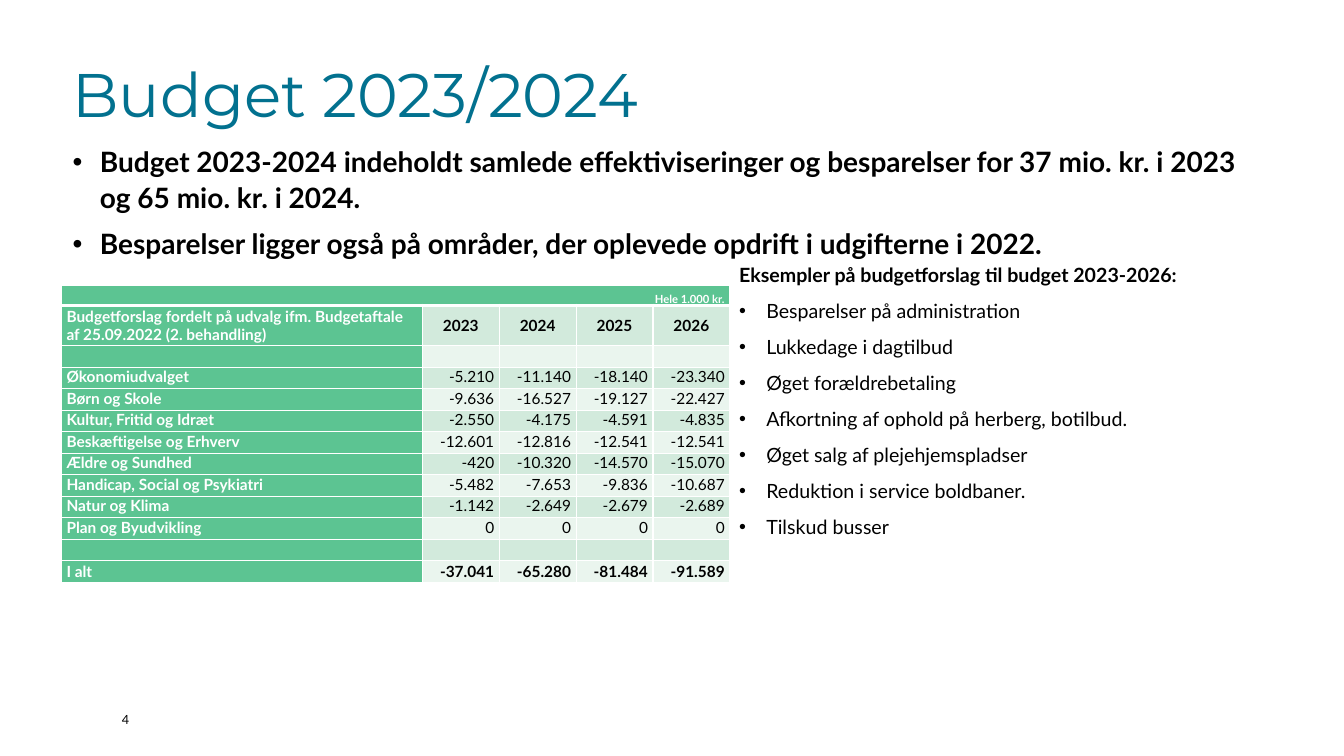
from lxml import etree
from pptx import Presentation
from pptx.dml.color import RGBColor
from pptx.enum.text import MSO_ANCHOR, MSO_AUTO_SIZE, PP_ALIGN
from pptx.oxml.ns import qn
from pptx.util import Inches, Pt

TOP, MIDDLE, BOTTOM = MSO_ANCHOR.TOP, MSO_ANCHOR.MIDDLE, MSO_ANCHOR.BOTTOM
LEFT, CENTER, RIGHT = PP_ALIGN.LEFT, PP_ALIGN.CENTER, PP_ALIGN.RIGHT
NO_AUTOFIT = MSO_AUTO_SIZE.NONE

COLORS = {
    "title": "02718F",
    "text": "000000",
    "white": "FFFFFF",
    "green": "5CC492",
    "band_dark": "D2EADC",
    "band_light": "EAF5EE",
}
HEADING_FONT = "Montserrat"
BODY_FONT = "Lato"

KEY_POINTS = [
    "Budget 2023-2024 indeholdt samlede effektiviseringer og besparelser for 37 mio. kr. i 2023 og 65 mio. kr. i 2024.",
    "Besparelser ligger også på områder, der oplevede opdrift i udgifterne i 2022.",
]
EXAMPLES_HEADING = "Eksempler på budgetforslag til budget 2023-2026:"
EXAMPLES = [
    "Besparelser på administration",
    "Lukkedage i dagtilbud",
    "Øget forældrebetaling",
    "Afkortning af ophold på herberg, botilbud.",
    "Øget salg af plejehjemspladser",
    "Reduktion i service boldbaner.",
    "Tilskud busser",
]
UNIT_NOTE = "Hele 1.000 kr."
EMPTY_ROW = ["", "", "", "", ""]
BUDGET_ROWS = [
    ["Budgetforslag fordelt på udvalg ifm. Budgetaftale af 25.09.2022 (2. behandling)",
     "2023", "2024", "2025", "2026"],
    EMPTY_ROW,
    ["Økonomiudvalget", "-5.210", "-11.140", "-18.140", "-23.340"],
    ["Børn og Skole", "-9.636", "-16.527", "-19.127", "-22.427"],
    ["Kultur, Fritid og Idræt", "-2.550", "-4.175", "-4.591", "-4.835"],
    ["Beskæftigelse og Erhverv", "-12.601", "-12.816", "-12.541", "-12.541"],
    ["Ældre og Sundhed", "-420", "-10.320", "-14.570", "-15.070"],
    ["Handicap, Social og Psykiatri", "-5.482", "-7.653", "-9.836", "-10.687"],
    ["Natur og Klima", "-1.142", "-2.649", "-2.679", "-2.689"],
    ["Plan og Byudvikling", "0", "0", "0", "0"],
    EMPTY_ROW,
    ["I alt", "-37.041", "-65.280", "-81.484", "-91.589"],
]


def rgb(name):
    return RGBColor.from_string(COLORS[name])


def style_runs(paragraph, size, color="text", bold=False, font=BODY_FONT):
    for run in paragraph.runs:
        run.font.size = Pt(size)
        run.font.name = font
        run.font.bold = bold
        run.font.color.rgb = rgb(color)


def place(shape, left, top, width, height, anchor):
    shape.left, shape.top = Inches(left), Inches(top)
    shape.width, shape.height = Inches(width), Inches(height)
    frame = shape.text_frame
    frame.margin_left = frame.margin_right = frame.margin_top = frame.margin_bottom = 0
    frame.word_wrap = True
    frame.auto_size = NO_AUTOFIT
    frame.vertical_anchor = anchor
    return frame


def set_bullet(paragraph, bulleted):
    properties = paragraph._p.get_or_add_pPr()
    indent = Inches(0.27) if bulleted else 0
    properties.set("marL", str(indent))
    properties.set("indent", str(-indent))
    if bulleted:
        etree.SubElement(properties, qn("a:buFont"), typeface="Arial")
        etree.SubElement(properties, qn("a:buChar"), char="•")
    else:
        etree.SubElement(properties, qn("a:buNone"))


def fill_list(frame, items, size, bold=False, heading=None):
    lines = [heading] + items if heading else items
    frame.text = "\n".join(lines)
    for index, paragraph in enumerate(frame.paragraphs):
        is_heading = bool(heading) and index == 0
        set_bullet(paragraph, not is_heading)
        paragraph.alignment = LEFT
        paragraph.line_spacing = 1.05
        paragraph.space_before = Pt(2 if index else 0)
        paragraph.space_after = Pt(6)
        style_runs(paragraph, size, bold=bold or is_heading)


def set_borders(cell, top=1, bottom=1):
    properties = cell._tc.get_or_add_tcPr()
    for side, width in (("L", 1), ("R", 1), ("T", top), ("B", bottom)):
        line = etree.SubElement(properties, qn(f"a:ln{side}"), w=str(Pt(width)))
        fill = etree.SubElement(line, qn("a:solidFill"))
        etree.SubElement(fill, qn("a:srgbClr"), val=COLORS["white"])


def fill_cell(cell, text, fill, align, anchor, size=11, color="text", bold=False):
    cell.fill.solid()
    cell.fill.fore_color.rgb = rgb(fill)
    cell.margin_left = cell.margin_right = Inches(0.05)
    cell.margin_top = cell.margin_bottom = 0
    cell.vertical_anchor = anchor
    cell.text = text
    paragraph = cell.text_frame.paragraphs[0]
    paragraph.alignment = align
    style_runs(paragraph, size, color, bold)
    if not text:
        etree.SubElement(paragraph._p, qn("a:endParaRPr"), sz=str(size * 100))


def add_budget_table(slide):
    last = len(BUDGET_ROWS)
    table = slide.shapes.add_table(
        last + 1, 5, Inches(0.61), Inches(2.83), Inches(6.63), Inches(2.95)).table
    table.columns[0].width = Inches(3.58)
    for year in range(1, 5):
        table.columns[year].width = Inches(3.05 / 4)
    for index, row in enumerate(table.rows):
        row.height = Inches({0: 0.2, 1: 0.4}.get(index, 2.35 / 11))

    for cell in table.rows[0].cells:
        set_borders(cell, bottom=3)
    unit_cell = table.cell(0, 0)
    unit_cell.merge(table.cell(0, 4))
    fill_cell(unit_cell, UNIT_NOTE, "green", RIGHT, BOTTOM, 8, "white", True)

    for row, values in enumerate(BUDGET_ROWS, 1):
        emphasized = row in (1, last)
        anchor = MIDDLE if emphasized else TOP
        band = "band_dark" if row % 2 else "band_light"
        for column, value in enumerate(values):
            cell = table.cell(row, column)
            set_borders(cell, top=3 if row == 1 else 1)
            if column == 0:
                fill_cell(cell, value, "green", LEFT, anchor, color="white", bold=True)
            else:
                align = CENTER if row == 1 else RIGHT
                fill_cell(cell, value, band, align, anchor, bold=emphasized)


def add_title(title):
    frame = place(title, 0.72, -0.01, 10.97, 1.3, BOTTOM)
    frame.text = "Budget 2023/2024"
    paragraph = frame.paragraphs[0]
    paragraph.alignment = LEFT
    paragraph.line_spacing = 1.0
    style_runs(paragraph, 43.9, "title", font=HEADING_FONT)


def add_page_number(slide):
    box = slide.shapes.add_textbox(0, 0, 0, 0)
    frame = place(box, 1.21, 7.01, 0.4, 0.2, BOTTOM)
    frame.text = "4"
    style_runs(frame.paragraphs[0], 9)


def main():
    presentation = Presentation()
    presentation.slide_width = Inches(13.33)
    presentation.slide_height = Inches(7.5)
    slide = presentation.slides.add_slide(presentation.slide_layouts[3])
    title, key_points, examples = slide.placeholders

    add_title(title)
    fill_list(place(key_points, 0.72, 1.42, 11.89, 1.17, TOP), KEY_POINTS, 20, bold=True)
    add_page_number(slide)
    add_budget_table(slide)
    fill_list(place(examples, 7.33, 2.6, 5.84, 4.61, TOP), EXAMPLES, 14,
              heading=EXAMPLES_HEADING)
    presentation.save("out.pptx")


if __name__ == "__main__":
    main()
